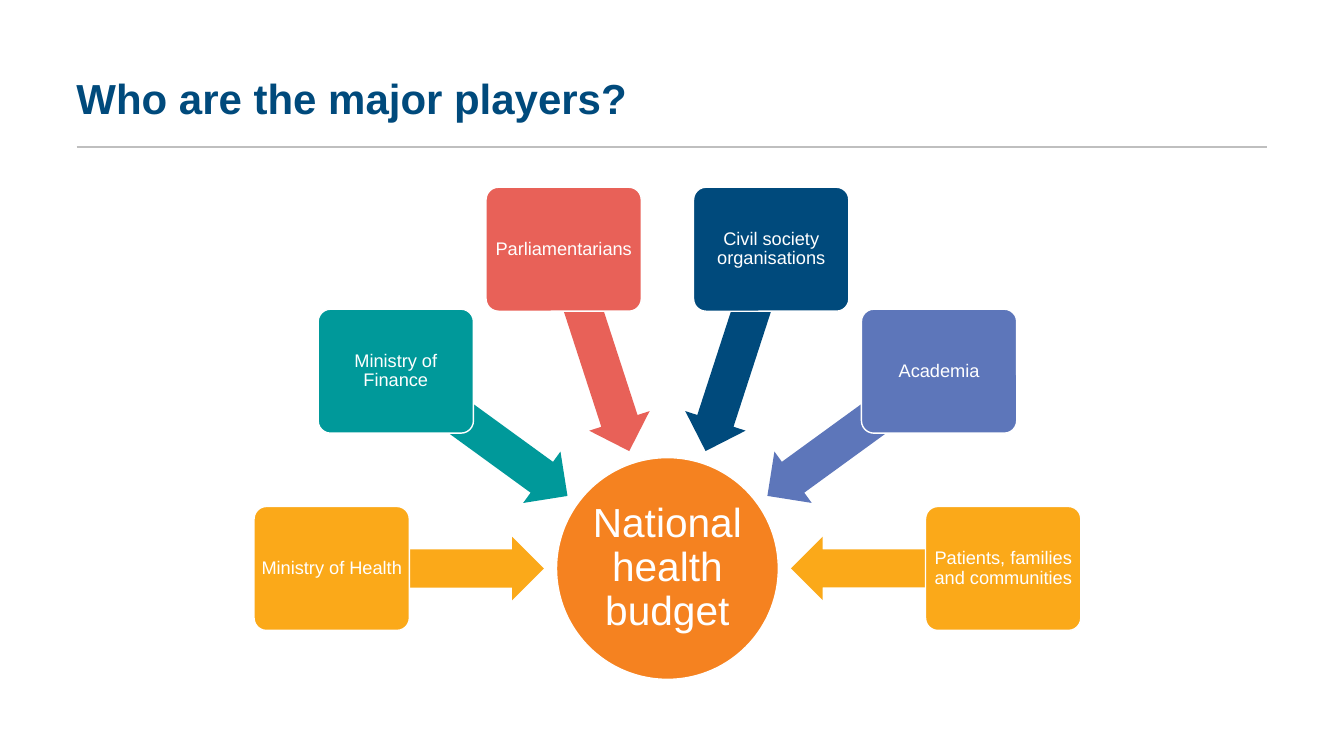
from math import cos, sin, radians
from lxml.etree import SubElement
from pptx import Presentation
from pptx.dml.color import RGBColor
from pptx.enum.shapes import MSO_CONNECTOR, MSO_SHAPE
from pptx.enum.text import MSO_ANCHOR, PP_ALIGN
from pptx.oxml.ns import qn
from pptx.util import Inches, Pt

NAVY = RGBColor(0x00, 0x4A, 0x7C)
AMBER = RGBColor(0xFB, 0xA9, 0x19)
TEAL = RGBColor(0x00, 0x99, 0x9A)
CORAL = RGBColor(0xE8, 0x61, 0x58)
BLUE = RGBColor(0x5D, 0x76, 0xBA)
ORANGE = RGBColor(0xF5, 0x82, 0x20)
GREY = RGBColor(0xBF, 0xBF, 0xBF)
WHITE = RGBColor(0xFF, 0xFF, 0xFF)

# Content, players clockwise from the left
TITLE = "Who are the major players?"
HUB = "National health budget"
PLAYERS = [
    ("Ministry of Health", AMBER),
    ("Ministry of Finance", TEAL),
    ("Parliamentarians", CORAL),
    ("Civil society organisations", NAVY),
    ("Academia", BLUE),
    ("Patients, families and communities", AMBER),
]

# Geometry in inches
WIDE, HIGH = 13.33, 7.5
MID_X, MID_Y = 6.62, 5.64
HUB_SIZE = (2.2, 2.2)
BOX_SIZE, BOX_RING = (1.54, 1.23), 3.33
ARROW_SIZE, ARROW_RING = (2.11, 0.63), 2.28
STEP = 180 / (len(PLAYERS) - 1)

deck = Presentation()
deck.slide_width, deck.slide_height = Inches(WIDE), Inches(HIGH)
slide = deck.slides.add_slide(deck.slide_layouts[6])


def write(shape, text, size, color, inset, align, anchor, bold=False):
    frame = shape.text_frame
    frame.word_wrap = True
    frame.vertical_anchor = anchor
    frame.margin_left = frame.margin_right = Inches(inset)
    frame.margin_top = frame.margin_bottom = Inches(min(inset, 0.05))
    line = frame.paragraphs[0]
    line.text = text
    line.alignment = align
    line.line_spacing = 0.9
    line.font.name, line.font.size = "Arial", Pt(size)
    line.font.bold, line.font.color.rgb = bold, color


def place(kind, size, color, ring=0, angle=0, edge=True):
    """Add a shape centred on a ring around the hub."""
    x = MID_X + ring * cos(radians(angle)) - size[0] / 2
    y = MID_Y + ring * sin(radians(angle)) - size[1] / 2
    shape = slide.shapes.add_shape(kind, *map(Inches, (x, y, *size)))
    shape.shadow.inherit = False
    shape.fill.solid()
    shape.fill.fore_color.rgb = color
    if edge:
        shape.line.color.rgb, shape.line.width = WHITE, Pt(1)
    else:
        shape.line.fill.background()
    return shape


def label(shape, text, size, inset):
    write(shape, text, size, WHITE, inset, PP_ALIGN.CENTER, MSO_ANCHOR.MIDDLE)


# Rule under the title
rule = slide.shapes.add_connector(
    MSO_CONNECTOR.STRAIGHT, *map(Inches, (0.76, 1.46, 12.57, 1.46)))
rule.line.color.rgb, rule.line.width = GREY, Pt(1.5)
SubElement(rule._element.spPr, qn("a:effectLst"))

# Title
head = slide.shapes.add_textbox(*map(Inches, (0.66, 0.46, 11.92, 0.82)))
write(head, TITLE, 30, NAVY, 0.1, PP_ALIGN.LEFT, MSO_ANCHOR.BOTTOM, True)

# Hub
label(place(MSO_SHAPE.OVAL, HUB_SIZE, ORANGE), HUB, 29, 0.02)

# Players, each with an arrow to the hub
for i, (name, color) in enumerate(PLAYERS):
    angle = 180 + i * STEP
    arrow = place(MSO_SHAPE.LEFT_ARROW, ARROW_SIZE, color,
                  ARROW_RING, angle, edge=False)
    arrow.adjustments[0], arrow.adjustments[1] = 0.6, 0.5
    arrow.rotation = angle
    box = place(MSO_SHAPE.ROUNDED_RECTANGLE, BOX_SIZE, color, BOX_RING, angle)
    box.adjustments[0] = 0.1
    label(box, name, 13, 0.03)

deck.save("out.pptx")
